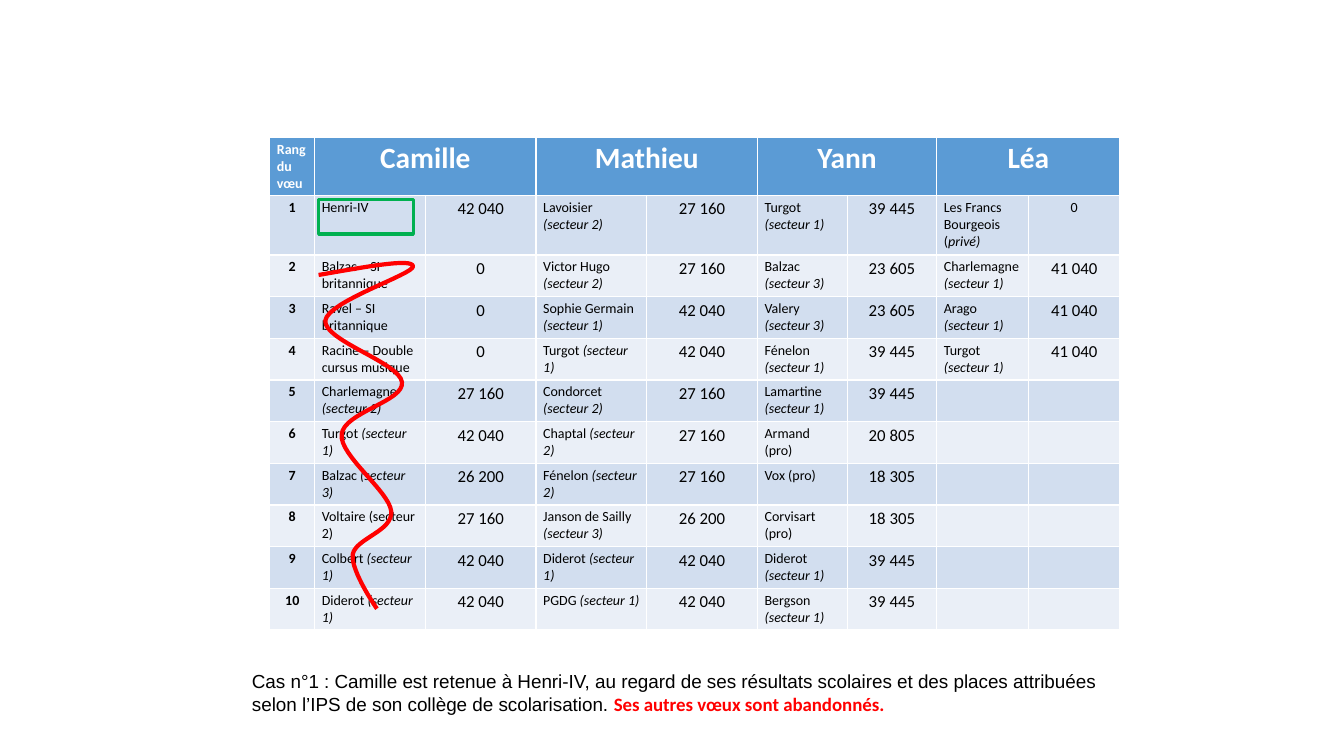
from pptx import Presentation, util as u
from pptx.dml import color
from pptx.enum import shapes, text


def paint(hex_code):
    return color.RGBColor.from_string(hex_code)


def write(para, pieces, size, bold=False, hex_code="000000", centred=False):
    """Plain text, then an italic part after the bar."""
    para.alignment = text.PP_ALIGN.CENTER if centred else text.PP_ALIGN.LEFT
    for number, piece in enumerate(pieces.split("|")):
        span = para.add_run()
        span.text = piece
        span.font.name = "Calibri"
        span.font.size = u.Pt(size)
        span.font.bold = bold
        span.font.italic = number == 1
        span.font.color.rgb = paint(hex_code)


deck = Presentation()
deck.slide_width, deck.slide_height = u.Cm(33.87), u.Cm(19.05)
page = deck.slides.add_slide(deck.slide_layouts[6])

# Wishes of each pupil: school and points, in order of preference
wishes = {
    "Camille": [
        ("Henri-IV", "42 040"),
        ("Balzac – SI britannique", "0"),
        ("Ravel – SI britannique", "0"),
        ("Racine – Double cursus musique", "0"),
        ("Charlemagne |(secteur 2)", "27 160"),
        ("Turgot |(secteur 1)", "42 040"),
        ("Balzac| (secteur 3)", "26 200"),
        ("Voltaire (secteur 2)", "27 160"),
        ("Colbert |(secteur 1)", "42 040"),
        ("Diderot |(secteur 1)", "42 040"),
    ],
    "Mathieu": [
        ("Lavoisier |(secteur 2)", "27 160"),
        ("Victor Hugo| (secteur 2)", "27 160"),
        ("Sophie Germain |(secteur 1)", "42 040"),
        ("Turgot |(secteur 1)", "42 040"),
        ("Condorcet |(secteur 2)", "27 160"),
        ("Chaptal |(secteur 2)", "27 160"),
        ("Fénelon |(secteur 2)", "27 160"),
        ("Janson de Sailly |(secteur 3)", "26 200"),
        ("Diderot |(secteur 1)", "42 040"),
        ("PGDG |(secteur 1)", "42 040"),
    ],
    "Yann": [
        ("Turgot |(secteur 1)", "39 445"),
        ("Balzac |(secteur 3)", "23 605"),
        ("Valery |(secteur 3)", "23 605"),
        ("Fénelon |(secteur 1)", "39 445"),
        ("Lamartine |(secteur 1)", "39 445"),
        ("Armand (pro)", "20 805"),
        ("Vox (pro)", "18 305"),
        ("Corvisart (pro)", "18 305"),
        ("Diderot |(secteur 1)", "39 445"),
        ("Bergson |(secteur 1)", "39 445"),
    ],
    "Léa": [
        ("Les Francs Bourgeois (|privé)", "0"),
        ("Charlemagne |(secteur 1)", "41 040"),
        ("Arago |(secteur 1)", "41 040"),
        ("Turgot |(secteur 1)", "41 040"),
    ],
}

# Table grid
widths = [1.13] + [2.79] * 4 + [2.26] * 2 + [2.31] * 2
heights = [1.45, 1.5] + [1.05] * 9
table = page.shapes.add_table(
    len(heights), len(widths), u.Cm(6.8), u.Cm(3.46),
    u.Cm(sum(widths)), u.Cm(sum(heights))).table
for column, width in zip(table.columns, widths):
    column.width = u.Cm(width)
for index, (row, height) in enumerate(zip(table.rows, heights)):
    row.height = u.Cm(height)
    for cell in row.cells:
        cell.margin_left = cell.margin_right = u.Cm(0.18)
        cell.margin_top = cell.margin_bottom = u.Cm(0.09)
        cell.fill.solid()
        band = "D2DEEF" if index % 2 else "EAEFF7"
        cell.fill.fore_color.rgb = paint(band if index else "5B9BD5")

# Rank column
write(table.cell(0, 0).text_frame.paragraphs[0], "Rang du vœu", 10, True, "FFFFFF")
for rank in range(1, len(heights)):
    write(table.cell(rank, 0).text_frame.paragraphs[0], str(rank), 10, True, centred=True)

# Two columns per pupil
for position, (pupil, choices) in enumerate(wishes.items()):
    left = 1 + 2 * position
    head = table.cell(0, left)
    head.merge(table.cell(0, left + 1))
    write(head.text_frame.paragraphs[0], pupil, 21, True, "FFFFFF", centred=True)
    for rank, (school, points) in enumerate(choices, 1):
        points_size = 10 if (pupil, rank) == ("Léa", 1) else 12
        write(table.cell(rank, left).text_frame.paragraphs[0], school, 10)
        write(table.cell(rank, left + 1).text_frame.paragraphs[0], points,
              points_size, centred=True)

# Green frame around the wish that is granted
frame = page.shapes.add_shape(
    shapes.MSO_SHAPE.RECTANGLE, u.Cm(8.03), u.Cm(5.03), u.Cm(2.39), u.Cm(0.87))

# Red wave through the dropped wishes: Bézier pieces (two handles, end point)
start = (8.03, 6.93)
bends = [
    ((9.19, 6.73), (10.39, 6.5), (10.41, 6.71)),
    ((10.44, 6.91), (8.26, 7.59), (8.2, 8.08)),
    ((8.15, 8.58), (10.08, 9.14), (10.13, 9.63)),
    ((10.21, 10.11), (8.66, 10.39), (8.61, 10.95)),
    ((8.56, 11.48), (9.8, 12.37), (9.86, 12.88)),
    ((9.91, 13.39), (8.97, 13.56), (8.89, 13.97)),
    ((8.84, 14.4), (9.5, 15.34), (9.5, 15.34)),
]
steps = 16
dots = []
origin = start
for bend in bends:
    for step in range(1, steps + 1):
        t = step / steps
        weights = ((1 - t) ** 3, 3 * t * (1 - t) ** 2, 3 * t ** 2 * (1 - t), t ** 3)
        dots.append(tuple(
            u.Cm(sum(w * place for w, place in zip(weights, axis)))
            for axis in zip(origin, *bend)))
    origin = bend[-1]
builder = page.shapes.build_freeform(u.Cm(start[0]), u.Cm(start[1]))
builder.add_line_segments(dots, close=False)
wave = builder.convert_to_shape()

for mark, hex_code, weight in ((frame, "00B050", 2.25), (wave, "FF0000", 3)):
    mark.shadow.inherit = False
    mark.fill.background()
    mark.line.color.rgb = paint(hex_code)
    mark.line.width = u.Pt(weight)

# Conclusion below the table
box = page.shapes.add_textbox(u.Cm(6.1), u.Cm(16.76), u.Cm(22.17), u.Cm(1.98))
box.text_frame.word_wrap = True
para = box.text_frame.paragraphs[0]
write(para, "Cas n°1 : Camille est retenue à Henri-IV, au regard de ses résultats "
      "scolaires et des places attribuées selon l’IPS de son collège de "
      "scolarisation. ", 13.5)
para.runs[0].font.name = "Arial"
write(para, "Ses autres vœux sont abandonnés.", 13.5, True, "FF0000")

deck.save("out.pptx")
